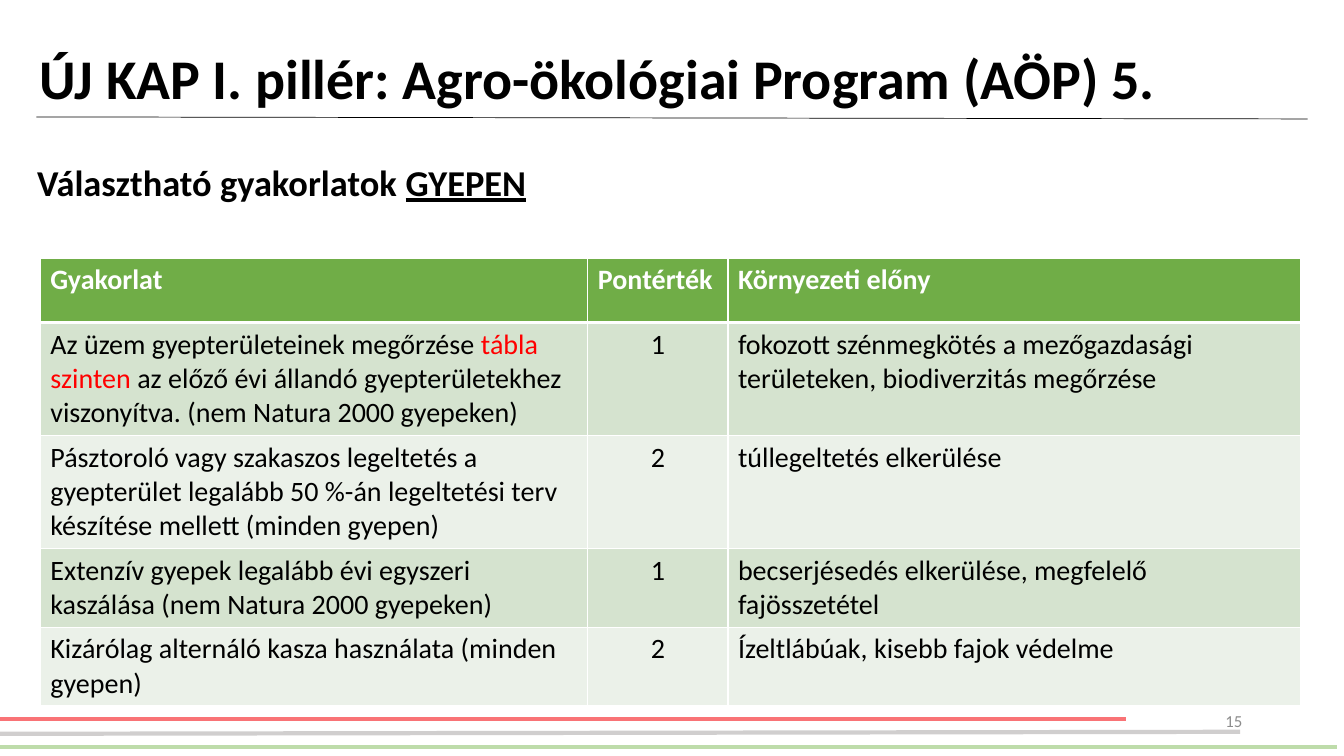
from dataclasses import dataclass

import pptx
import pptx.dml.color
import pptx.enum.text
import pptx.oxml
import pptx.oxml.ns
import pptx.util

PX = 9144  # EMU per px, 100 px to the inch
FONT = "Calibri"
BLACK, WHITE, RED = "000000", "FFFFFF", "FF0000"
HEADER_GREEN, BANDS = "70AD47", ("D5E3CF", "EBF1E9")
LEFT = pptx.enum.text.PP_ALIGN.LEFT
CENTER = pptx.enum.text.PP_ALIGN.CENTER
RIGHT = pptx.enum.text.PP_ALIGN.RIGHT
TOP = pptx.enum.text.MSO_ANCHOR.TOP
MIDDLE = pptx.enum.text.MSO_ANCHOR.MIDDLE


@dataclass
class Run:
    text: str
    color: str = BLACK
    bold: bool = False
    underline: bool = False


@dataclass
class Rule:
    x1: int
    y1: int
    x2: int
    y2: int
    color: str
    width: float


@dataclass
class TextBox:
    x: int
    y: int
    w: int
    h: int
    size: int
    runs: list[Run]
    align: int = LEFT
    anchor: int = TOP
    inset: int = 10
    spacing: float = 1.0


RULES = [
    Rule(0, 713, 1117, 713, "F97376", 3),
    Rule(0, 741, 1326, 741, "BEDCAA", 3),
    Rule(0, 728, 1230, 726, "D0CECE", 3),
    Rule(36, 116, 1297, 118, BLACK, 0.5),
]

TEXTS = [
    TextBox(942, 695, 300, 40, 12, [Run("15", "8C8C8C")], RIGHT, MIDDLE),
    TextBox(27, 154, 584, 54, 26, [Run("Választható gyakorlatok ", bold=True),
                                   Run("GYEPEN", bold=True, underline=True)]),
    TextBox(17, 15, 1288, 132, 40,
            [Run("ÚJ KAP I. pillér: Agro-ökológiai Program (AÖP) 5.", bold=True)],
            anchor=MIDDLE, inset=22, spacing=0.9),
]

TABLE_X, TABLE_Y = 40, 256
COLUMN_WIDTHS = [543, 139, 568]
ROW_HEIGHTS = [64, 112, 112, 78, 78]
HEADINGS = ["Gyakorlat", "Pontérték", "Környezeti előny"]
PRACTICES = [
    ([Run("Az üzem gyepterületeinek megőrzése "), Run("tábla szinten ", RED),
      Run("az előző évi állandó gyepterületekhez viszonyítva. "
          "(nem Natura 2000 gyepeken)")],
     "1", "fokozott szénmegkötés a mezőgazdasági területeken, biodiverzitás megőrzése"),
    ([Run("Pásztoroló vagy szakaszos legeltetés a gyepterület legalább 50 %-án "
          "legeltetési terv készítése mellett (minden gyepen)")],
     "2", "túllegeltetés elkerülése"),
    ([Run("Extenzív gyepek legalább évi egyszeri kaszálása (nem Natura 2000 gyepeken)")],
     "1", "becserjésedés elkerülése, megfelelő fajösszetétel"),
    ([Run("Kizárólag alternáló kasza használata (minden gyepen)")],
     "2", "Ízeltlábúak, kisebb fajok védelme"),
]


def px(n: int) -> pptx.util.Emu:
    return pptx.util.Emu(n * PX)


def rgb(color: str) -> pptx.dml.color.RGBColor:
    return pptx.dml.color.RGBColor.from_string(color)


def write(p, runs: list[Run], size: int, align: int) -> None:
    p.alignment = align
    for run in runs:
        r = p.add_run()
        r.text = run.text
        r.font.name = FONT
        r.font.size = pptx.util.Pt(size)
        r.font.bold = run.bold
        r.font.underline = run.underline
        r.font.color.rgb = rgb(run.color)


def draw_rule(s, rule: Rule) -> None:
    sp = s.shapes.add_connector(pptx.enum.shapes.MSO_CONNECTOR.STRAIGHT,
                                px(rule.x1), px(rule.y1), px(rule.x2), px(rule.y2))
    sp.line.color.rgb = rgb(rule.color)
    sp.line.width = pptx.util.Pt(rule.width)
    spPr = sp._element.spPr
    spPr.append(spPr.makeelement(pptx.oxml.ns.qn("a:effectLst"), {}))


def draw_text(s, box: TextBox) -> None:
    sp = s.shapes.add_textbox(px(box.x), px(box.y), px(box.w), px(box.h))
    tf = sp.text_frame
    tf.word_wrap = True
    tf.vertical_anchor = box.anchor
    tf.margin_left = px(box.inset)
    p = tf.paragraphs[0]
    p.line_spacing = box.spacing
    write(p, box.runs, box.size, box.align)


def set_borders(cell, bottom: int) -> None:
    tcPr = cell._tc.get_or_add_tcPr()
    for side, width in (("L", 1), ("R", 1), ("T", 1), ("B", bottom)):
        tcPr.append(pptx.oxml.parse_xml(
            f'<a:ln{side} {pptx.oxml.ns.nsdecls("a")} w="{pptx.util.Pt(width)}">'
            f'<a:solidFill><a:srgbClr val="{WHITE}"/></a:solidFill></a:ln{side}>'))


def draw_cell(cell, runs: list[Run], fill: str, align: int, bottom: int) -> None:
    set_borders(cell, bottom)
    cell.fill.solid()
    cell.fill.fore_color.rgb = rgb(fill)
    write(cell.text_frame.paragraphs[0], runs, 20, align)


def draw_table(s) -> None:
    table = s.shapes.add_table(len(ROW_HEIGHTS), len(COLUMN_WIDTHS), px(TABLE_X), px(TABLE_Y),
                               px(sum(COLUMN_WIDTHS)), px(sum(ROW_HEIGHTS))).table
    table.horz_banding = False
    for column, width in zip(table.columns, COLUMN_WIDTHS):
        column.width = px(width)
    for row, height in zip(table.rows, ROW_HEIGHTS):
        row.height = px(height)
    for j, heading in enumerate(HEADINGS):
        draw_cell(table.cell(0, j), [Run(heading, WHITE, True)], HEADER_GREEN, LEFT, 3)
    for i, (practice, points, benefit) in enumerate(PRACTICES):
        for j, runs in enumerate((practice, [Run(points)], [Run(benefit)])):
            draw_cell(table.cell(i + 1, j), runs, BANDS[i % 2], CENTER if j == 1 else LEFT, 1)


def main() -> None:
    prs = pptx.Presentation()
    prs.slide_width, prs.slide_height = pptx.util.Inches(13.33), pptx.util.Inches(7.5)
    s = prs.slides.add_slide(prs.slide_layouts[6])
    # Rules behind the content
    for rule in RULES:
        draw_rule(s, rule)
    # Table of practices
    draw_table(s)
    # Page number, subtitle and title
    for box in TEXTS:
        draw_text(s, box)
    prs.save("out.pptx")


if __name__ == "__main__":
    main()
